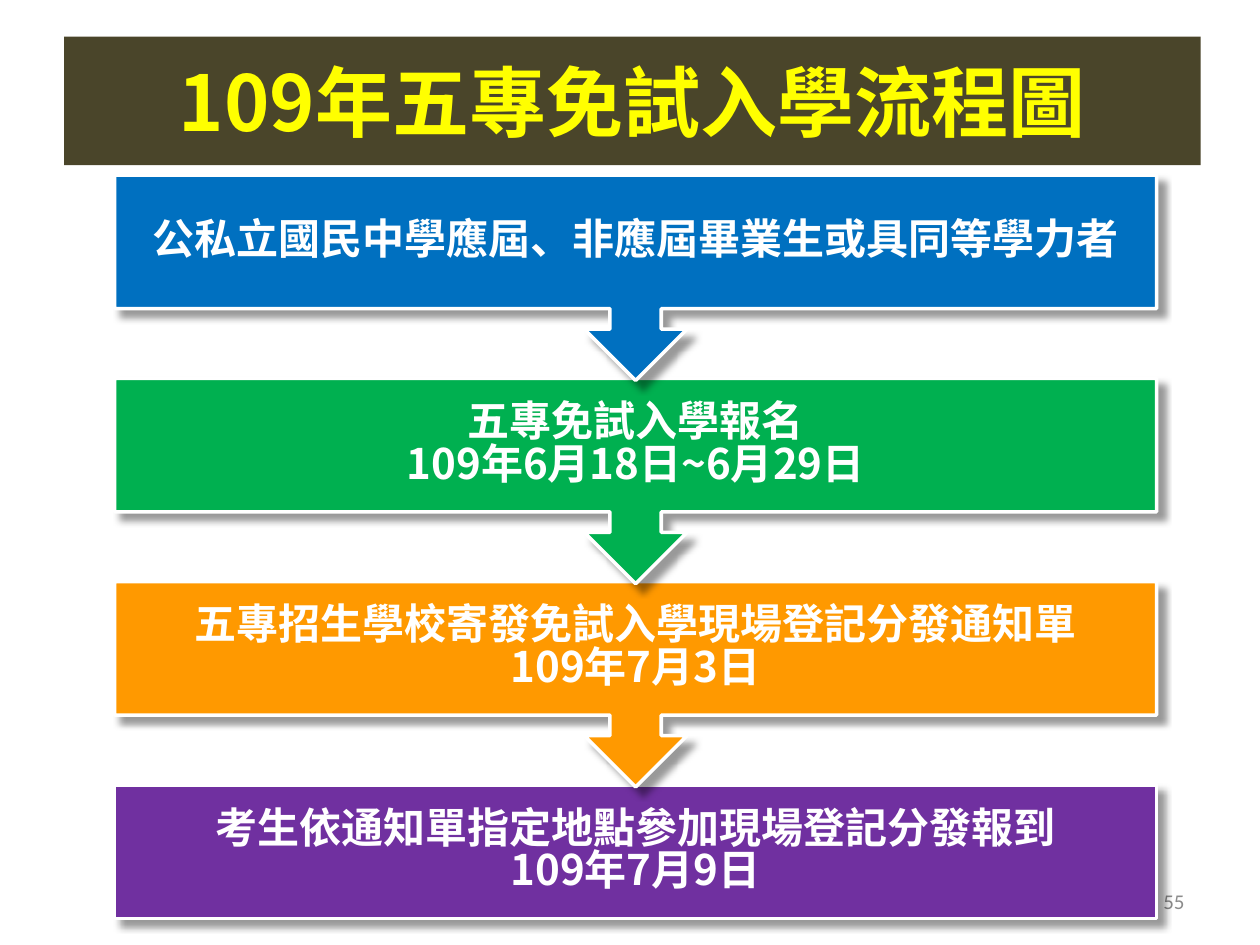
from lxml import etree
from pptx import Presentation
from pptx.dml.color import RGBColor
from pptx.enum import shapes, text
from pptx.oxml.ns import qn
from pptx.util import Inches, Pt

WHITE = RGBColor(0xFF, 0xFF, 0xFF)
YELLOW = RGBColor(0xFF, 0xFF, 0x00)
OLIVE = RGBColor(0x4A, 0x45, 0x2A)
GREY = RGBColor(0x8C, 0x8C, 0x8C)
BLUE = RGBColor(0x00, 0x70, 0xC0)
GREEN = RGBColor(0x00, 0xB0, 0x50)
ORANGE = RGBColor(0xFF, 0x99, 0x00)
PURPLE = RGBColor(0x70, 0x30, 0xA0)
CJK = "Noto Sans CJK SC"

STEPS = [
    (BLUE, ["公私立國民中學應屆、非應屆畢業生或具同等學力者"]),
    (GREEN, ["五專免試入學報名", "109年6月18日~6月29日"]),
    (ORANGE, ["五專招生學校寄發免試入學現場登記分發通知單", "109年7月3日"]),
    (PURPLE, ["考生依通知單指定地點參加現場登記分發報到", "109年7月9日"]),
]


def format_text(tf, size, color, font, align, bold=False):
    tf.word_wrap = True
    tf.vertical_anchor = text.MSO_ANCHOR.MIDDLE
    for p in tf.paragraphs:
        p.alignment = align
        for r in p.runs:
            r.font.size, r.font.bold, r.font.name = Pt(size), bold, font
            r.font.color.rgb = color
            ea = etree.SubElement(r._r.get_or_add_rPr(), qn("a:ea"))
            ea.set("typeface", font)


def add_shadow(sp):
    sp.shadow.inherit = False
    effects = sp._element.spPr.find(qn("a:effectLst"))
    shadow = etree.SubElement(effects, qn("a:outerShdw"), blurRad=str(Pt(4)),
                              dist=str(Pt(5)), dir=str(45 * 60000), rotWithShape="0")
    color = etree.SubElement(shadow, qn("a:srgbClr"), val="000000")
    etree.SubElement(color, qn("a:alpha"), val="40000")


def set_title(slide, left, top, width, height):
    title = slide.shapes.title
    title.left, title.top, title.width, title.height = left, top, width, height
    title.fill.solid()
    title.fill.fore_color.rgb = OLIVE
    title.text_frame.text = "109年五專免試入學流程圖"
    format_text(title.text_frame, 44, YELLOW, CJK, text.PP_ALIGN.CENTER, True)


def add_step(slide, kind, color, lines, left, top, width, height):
    sp = slide.shapes.add_shape(kind, left, top, width, height)
    sp.fill.solid()
    sp.fill.fore_color.rgb = color
    sp.line.color.rgb = WHITE
    sp.line.width = Pt(2)
    add_shadow(sp)
    tf = sp.text_frame
    tf.margin_left = tf.margin_right = tf.margin_top = tf.margin_bottom = Inches(0.19)
    tf.text = "\n".join(lines)
    format_text(tf, 24, WHITE, CJK, text.PP_ALIGN.CENTER, True)
    for p in tf.paragraphs:
        p.line_spacing = 0.85


def add_flow(slide, left, top, width, height):
    box_height, arrow_height = Inches(1.06), Inches(1.63)
    last = len(STEPS) - 1
    pitch = (height - box_height) / last
    # Later steps go behind, so that each arrow tip lies over the next box
    for i in range(last, -1, -1):
        color, lines = STEPS[i]
        if i == last:
            kind, h = shapes.MSO_SHAPE.RECTANGLE, box_height
        else:
            kind, h = shapes.MSO_SHAPE.DOWN_ARROW_CALLOUT, arrow_height
        add_step(slide, kind, color, lines, left, int(top + i * pitch), width, h)


def add_page_number(slide, left, top, width, height):
    tf = slide.shapes.add_textbox(left, top, width, height).text_frame
    tf.text = "55"
    format_text(tf, 12, GREY, "Calibri", text.PP_ALIGN.RIGHT)


def main():
    prs = Presentation()
    prs.slide_width, prs.slide_height = Inches(10), Inches(7.5)
    slide = prs.slides.add_slide(prs.slide_layouts[5])
    # Page number, flow chart and title bar
    add_page_number(slide, Inches(7.17), Inches(6.95), Inches(2.33), Inches(0.4))
    add_flow(slide, Inches(0.91), Inches(1.39), Inches(8.27), Inches(5.9))
    set_title(slide, Inches(0.51), Inches(0.29), Inches(9.02), Inches(1.02))
    prs.save("out.pptx")


if __name__ == "__main__":
    main()
